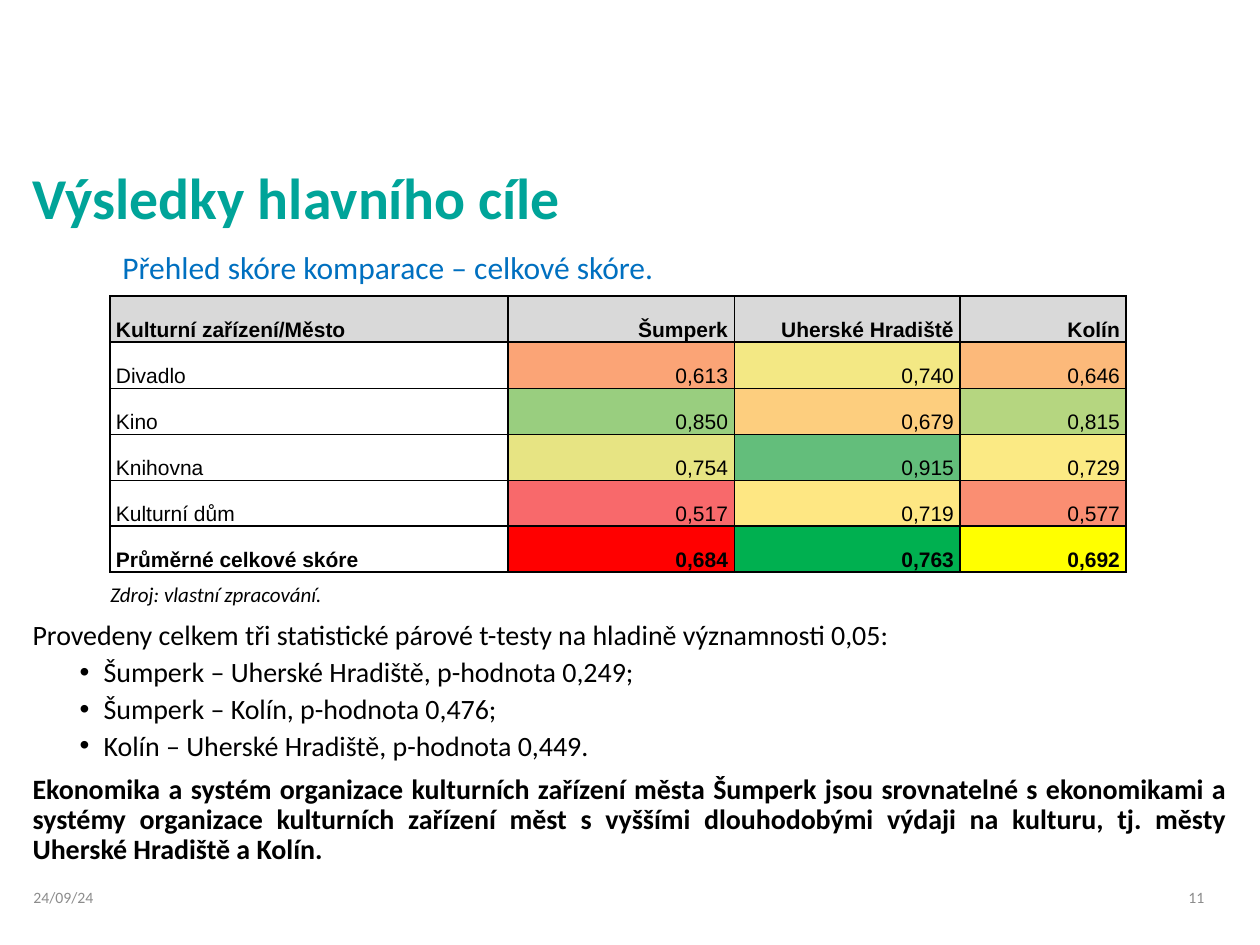
from lxml.etree import SubElement
from pptx import Presentation
from pptx.dml.color import RGBColor
from pptx.enum.text import MSO_ANCHOR as Anchor, MSO_AUTO_SIZE as AutoSize, PP_ALIGN as Align
from pptx.oxml.ns import qn
from pptx.util import Emu, Pt

EMU_PER_PX = 914400 / 126
COLORS = {
    "title": "00A499", "caption": "0070C0", "text": "000000", "footer": "8C8C8C",
    "header": "D9D9D9", "border": "000000",
}
COLUMN_WIDTHS = [398, 226, 226, 166]
ROW_HEIGHT = 46
THICK_ROW_EDGES = {0, 1, 5, 6}
THICK_COLUMN_EDGES = {0, 1, 3, 4}
HEADER = ["Kulturní zařízení/Město", "Šumperk", "Uherské Hradiště", "Kolín"]
SCORES = [
    ("Divadlo", ("0,613", "FBA476"), ("0,740", "F3E884"), ("0,646", "FCB97A")),
    ("Kino", ("0,850", "99CE7F"), ("0,679", "FDCE7E"), ("0,815", "B5D680")),
    ("Knihovna", ("0,754", "E7E483"), ("0,915", "63BE7B"), ("0,729", "FBEA84")),
    ("Kulturní dům", ("0,517", "F8696B"), ("0,719", "FEE783"), ("0,577", "FA8E72")),
    ("Průměrné celkové skóre", ("0,684", "FF0000"), ("0,763", "00B050"), ("0,692", "FFFF00")),
]
INTRODUCTION = "Provedeny celkem tři statistické párové t-testy na hladině významnosti 0,05:"
TESTS = [
    "Šumperk – Uherské Hradiště, p-hodnota 0,249;",
    "Šumperk – Kolín, p-hodnota 0,476;",
    "Kolín – Uherské Hradiště, p-hodnota 0,449.",
]
CONCLUSION = (
    "Ekonomika a systém organizace kulturních zařízení města Šumperk jsou srovnatelné "
    "s ekonomikami a systémy organizace kulturních zařízení měst s vyššími dlouhodobými "
    "výdaji na kulturu, tj. městy Uherské Hradiště a Kolín."
)


def px(value):
    """Convert pixels to EMU."""
    return Emu(round(value * EMU_PER_PX))


def place(shape, box):
    """Move a shape to a pixel box."""
    shape.left, shape.top, shape.width, shape.height = map(px, box)


def format_runs(paragraph, size, color, bold=False, italic=False, name="Calibri"):
    """Apply one font to every run of a paragraph."""
    for run in paragraph.runs:
        font = run.font
        font.name, font.size, font.bold, font.italic = name, Pt(size), bold, italic
        font.color.rgb = RGBColor.from_string(color)


def add_label(slide, box, text, size, color, anchor=Anchor.TOP, italic=False):
    """Add a one-line text box."""
    frame = slide.shapes.add_textbox(*map(px, box)).text_frame
    frame.word_wrap = True
    frame.vertical_anchor = anchor
    frame.text = text
    format_runs(frame.paragraphs[0], size, color, italic=italic)


def fill_title(slide, box):
    """Fill the title placeholder."""
    title = slide.shapes.title
    place(title, box)
    frame = title.text_frame
    frame.text = "Výsledky hlavního cíle"
    frame.auto_size = AutoSize.NONE
    frame.vertical_anchor = Anchor.BOTTOM
    paragraph = frame.paragraphs[0]
    paragraph.alignment = Align.LEFT
    paragraph.line_spacing = 0.9
    format_runs(paragraph, 33, COLORS["title"], bold=True)


def set_bullet(paragraph, bulleted):
    """Set the indent and bullet of a body paragraph."""
    properties = paragraph._p.get_or_add_pPr()
    properties.set("marL", str(px(71 if bulleted else 0)))
    properties.set("indent", str(px(-24 if bulleted else 0)))
    if bulleted:
        SubElement(properties, qn("a:buFont"), typeface="Arial")
        SubElement(properties, qn("a:buChar"), char="•")
    else:
        SubElement(properties, qn("a:buNone"))


def fill_body(slide, box):
    """Fill the body placeholder with the test results and the conclusion."""
    body = slide.placeholders[1]
    place(body, box)
    frame = body.text_frame
    frame.text = "\n".join([INTRODUCTION, *TESTS, CONCLUSION])
    frame.auto_size = AutoSize.NONE
    for index, paragraph in enumerate(frame.paragraphs):
        bulleted = paragraph.text in TESTS
        set_bullet(paragraph, bulleted)
        paragraph.level = int(bulleted)
        paragraph.alignment = Align.JUSTIFY
        paragraph.line_spacing = 0.9
        paragraph.space_before = Pt(0 if index == 0 else 3.8 if bulleted else 7.5)
        format_runs(paragraph, 16, COLORS["text"], bold=paragraph.text == CONCLUSION)


def set_borders(cell, row, column):
    """Draw the four borders of a cell, thick or thin by grid edge."""
    properties = cell._tc.get_or_add_tcPr()
    edges = {
        "L": column in THICK_COLUMN_EDGES, "R": column + 1 in THICK_COLUMN_EDGES,
        "T": row in THICK_ROW_EDGES, "B": row + 1 in THICK_ROW_EDGES,
    }
    for side, thick in edges.items():
        line = SubElement(properties, qn(f"a:ln{side}"), w=str(Pt(1 if thick else 0.5)))
        fill = SubElement(line, qn("a:solidFill"))
        SubElement(fill, qn("a:srgbClr"), val=COLORS["border"])


def format_cell(cell, row, column, text, color):
    """Write and format one table cell."""
    set_borders(cell, row, column)
    if color:
        cell.fill.solid()
        cell.fill.fore_color.rgb = RGBColor.from_string(color)
    else:
        cell.fill.background()
    cell.margin_left = cell.margin_right = px(6)
    cell.margin_top = cell.margin_bottom = 0
    cell.vertical_anchor = Anchor.BOTTOM
    cell.text_frame.text = text
    paragraph = cell.text_frame.paragraphs[0]
    paragraph.alignment = Align.RIGHT if column else Align.LEFT
    paragraph.line_spacing = 1.07
    format_runs(paragraph, 12, COLORS["text"], bold=row in (0, len(SCORES)), name="Arial")


def add_score_table(slide, left, top):
    """Add the table of scores by facility and town."""
    rows = [[(text, COLORS["header"]) for text in HEADER]]
    rows += [[(name, None), *scores] for name, *scores in SCORES]
    box = (left, top, sum(COLUMN_WIDTHS), ROW_HEIGHT * len(rows))
    table = slide.shapes.add_table(len(rows), len(HEADER), *map(px, box)).table
    table.first_row = table.horz_banding = False
    for column, width in zip(table.columns, COLUMN_WIDTHS):
        column.width = px(width)
    for row_index, row in enumerate(rows):
        table.rows[row_index].height = px(ROW_HEIGHT)
        for column_index, (text, color) in enumerate(row):
            cell = table.cell(row_index, column_index)
            format_cell(cell, row_index, column_index, text, color)


def add_footer(slide, top, height):
    """Add the date and the slide number."""
    for left, width, text in [(21, 107, "24/09/24"), (1176, 63, "11")]:
        add_label(slide, (left, top, width, height), text, 9, COLORS["footer"], Anchor.MIDDLE)


def main():
    """Build and save the presentation."""
    presentation = Presentation()
    presentation.slide_width, presentation.slide_height = px(1260), px(945)
    slide = presentation.slides.add_slide(presentation.slide_layouts[1])
    add_footer(slide, 876, 43)
    add_score_table(slide, 110, 296)
    add_label(slide, (110, 242, 959, 50), "Přehled skóre komparace – celkové skóre.", 18,
              COLORS["caption"])
    add_label(slide, (98, 575, 630, 38), "Zdroj: vlastní zpracování.", 12, COLORS["text"],
              italic=True)
    fill_title(slide, (20, 97, 1220, 141))
    fill_body(slide, (20, 615, 1220, 261))
    presentation.save("out.pptx")


if __name__ == "__main__":
    main()
